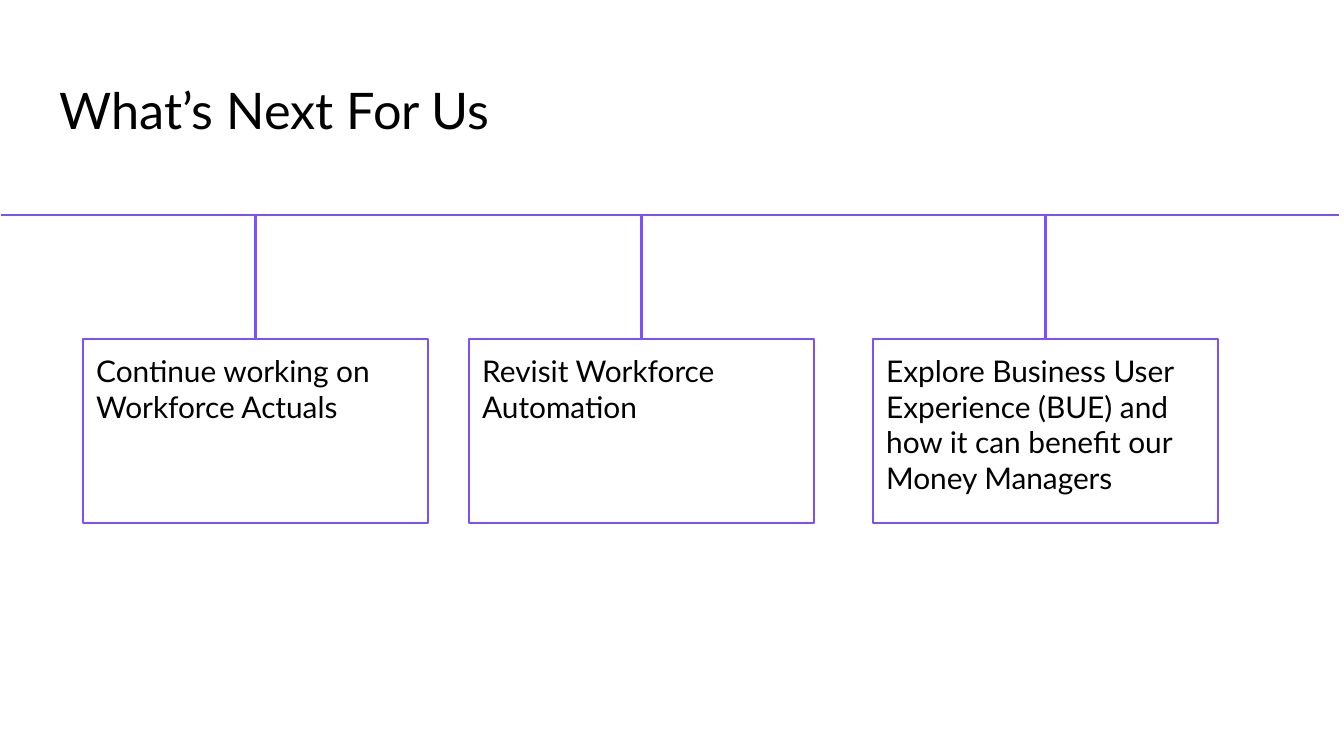
from dataclasses import dataclass

from lxml.etree import SubElement
from pptx import Presentation
from pptx.dml.color import RGBColor
from pptx.enum.shapes import MSO_CONNECTOR as CONN, MSO_SHAPE as SHAPE
from pptx.enum.text import MSO_ANCHOR as ANCHOR, MSO_AUTO_SIZE as AUTO, PP_ALIGN as ALIGN
from pptx.oxml.ns import qn
from pptx.shapes.autoshape import Shape
from pptx.shapes.connector import Connector
from pptx.slide import Slide
from pptx.text.text import TextFrame
from pptx.util import Emu, Inches, Pt

EMU_PER_PX = 914400 / 134.4
COLORS = {"text": "000000", "accent": "7C4FFF", "background": "FFFFFF"}
FONT = "Lato"
LINE_WIDTH = Pt(1.5)
TIMELINE_Y = 215
BOX_TOP, BOX_WIDTH, BOX_HEIGHT = 339, 345, 184


@dataclass
class Step:
    left: int
    text: str


STEPS = [
    Step(83, "Continue working on Workforce Actuals"),
    Step(469, "Revisit Workforce Automation"),
    Step(873, "Explore Business User Experience (BUE) and \vhow it can benefit our Money Managers"),
]


def px(value: int) -> Emu:
    return Emu(round(value * EMU_PER_PX))


def color(name: str) -> RGBColor:
    return RGBColor.from_string(COLORS[name])


def set_text(tf: TextFrame, text: str, size: int) -> None:
    tf.text = text
    tf.word_wrap = True
    tf.auto_size = AUTO.NONE
    tf.vertical_anchor = ANCHOR.TOP
    tf.margin_left = tf.margin_right = tf.margin_top = tf.margin_bottom = Inches(0.1)
    p = tf.paragraphs[0]
    p.alignment = ALIGN.LEFT
    p.space_before = Pt(0)
    for r in p.runs:
        r.font.name = FONT
        r.font.size = Pt(size)
        r.font.color.rgb = color("text")


def add_line(slide: Slide, x1: int, y1: int, x2: int, y2: int) -> Connector:
    line = slide.shapes.add_connector(CONN.STRAIGHT, px(x1), px(y1), px(x2), px(y2))
    line.line.color.rgb = color("accent")
    line.line.width = LINE_WIDTH
    SubElement(line._element.spPr, qn("a:effectLst"))
    return line


def add_box(slide: Slide, step: Step) -> Shape:
    sp = slide.shapes.add_shape(
        SHAPE.RECTANGLE, px(step.left), px(BOX_TOP), px(BOX_WIDTH), px(BOX_HEIGHT))
    sp.shadow.inherit = False
    sp.fill.background()
    sp.line.color.rgb = color("accent")
    sp.line.width = LINE_WIDTH
    set_text(sp.text_frame, step.text, 16)
    sp.text_frame.paragraphs[0].space_after = Pt(12)
    return sp


def add_stem(slide: Slide, step: Step, box: Shape) -> None:
    """Join the middle of the box's top side to the timeline."""
    center = step.left + BOX_WIDTH // 2
    stem = add_line(slide, center, BOX_TOP, center, TIMELINE_Y)
    stem.begin_connect(box, 0)
    stem.end_x = stem.begin_x


def main() -> None:
    prs = Presentation()
    prs.slide_width, prs.slide_height = px(1344), px(756)
    slide = prs.slides.add_slide(prs.slide_layouts[5])
    slide.background.fill.solid()
    slide.background.fill.fore_color.rgb = color("background")

    title = slide.shapes.title
    title.left, title.top, title.width, title.height = px(46), px(66), px(1253), px(85)
    set_text(title.text_frame, "What’s Next For Us", 27)

    add_line(slide, 1, TIMELINE_Y, 1339, TIMELINE_Y)
    for step in STEPS:
        add_stem(slide, step, add_box(slide, step))

    prs.save("out.pptx")


if __name__ == "__main__":
    main()
